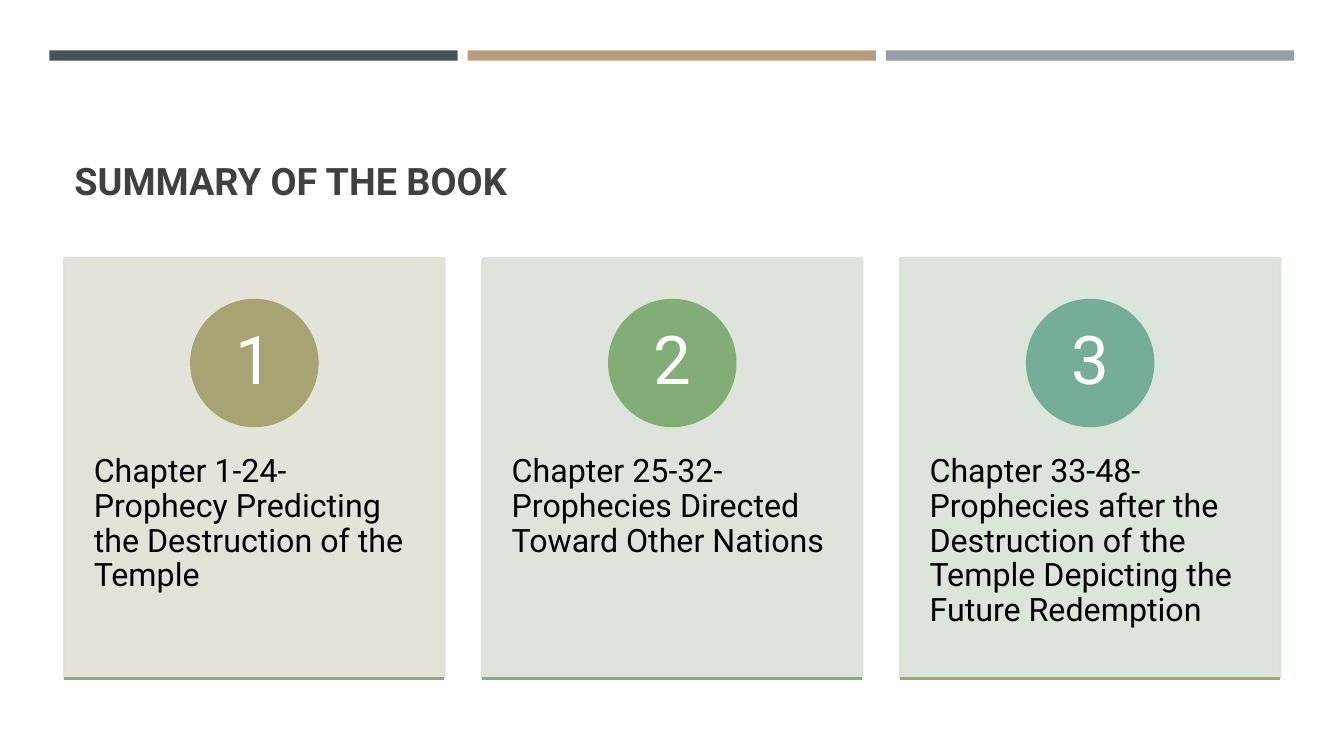
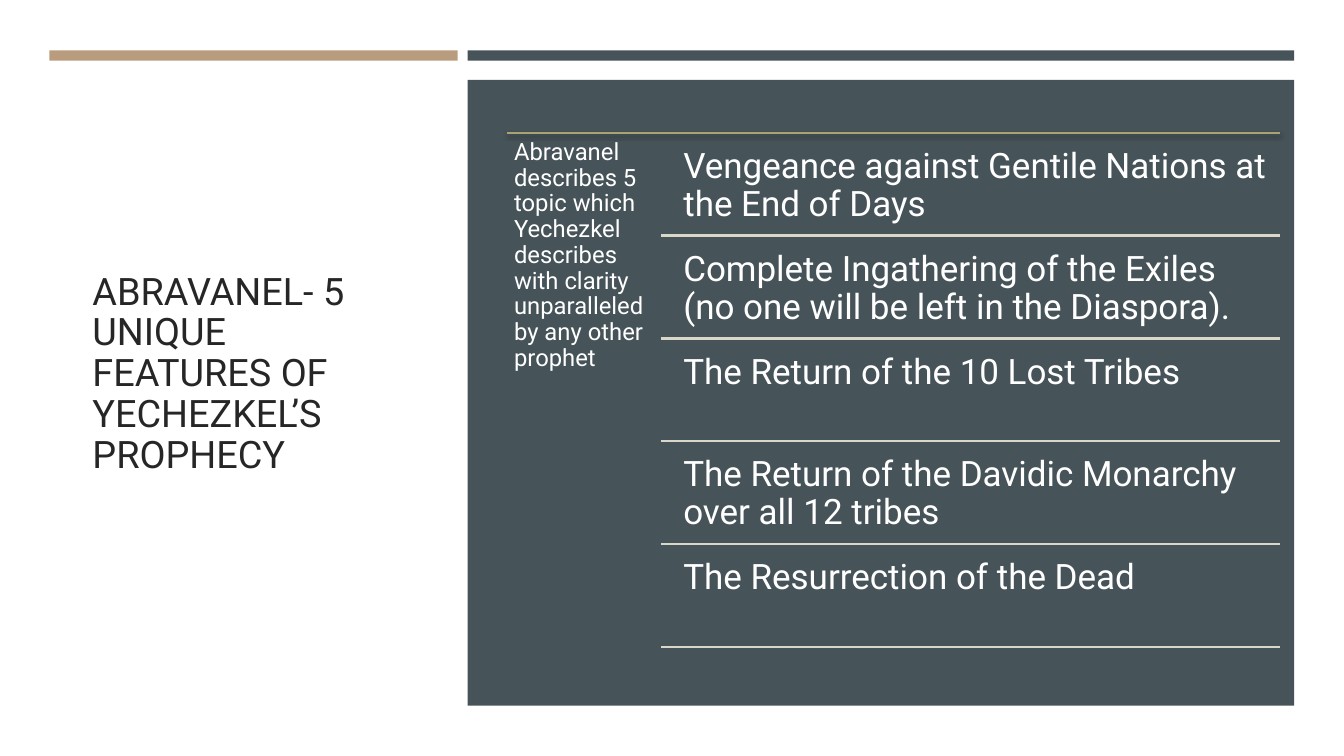
import pptx
import pptx.util
import pptx.dml.color
import pptx.enum.shapes
import pptx.enum.text
import pptx.oxml
import pptx.oxml.ns
import pptx.oxml.xmlchemy

Pt = pptx.util.Pt
RGBColor = pptx.dml.color.RGBColor
MSO_SHAPE = pptx.enum.shapes.MSO_SHAPE
ANCHOR = pptx.enum.text.MSO_ANCHOR
ALIGN = pptx.enum.text.PP_ALIGN
OxmlElement = pptx.oxml.xmlchemy.OxmlElement
qn = pptx.oxml.ns.qn

FONT = "Roboto"
SLATE = RGBColor(0x46, 0x53, 0x59)
TAN = RGBColor(0xB9, 0x9C, 0x7E)
GREY = RGBColor(0x96, 0x9F, 0xA7)
OLIVE = RGBColor(0xA7, 0xA3, 0x72)
GREEN = RGBColor(0x83, 0xAD, 0x76)
TEAL = RGBColor(0x76, 0xAD, 0x97)
SAGE = RGBColor(0x98, 0xA6, 0x7E)
MINT = RGBColor(0x82, 0xAB, 0x89)
PALE_OLIVE = RGBColor(0xE1, 0xE0, 0xD5)
PALE_GREEN = RGBColor(0xDD, 0xE1, 0xD8)
PALE_TEAL = RGBColor(0xD9, 0xE3, 0xD6)
PALE_RULE = RGBColor(0xD9, 0xD7, 0xC9)
TITLE_GREY = RGBColor(0x40, 0x40, 0x40)
TITLE_DARK = RGBColor(0x26, 0x26, 0x26)
BLACK = RGBColor(0, 0, 0)
WHITE = RGBColor(0xFF, 0xFF, 0xFF)

BAND_LEFT, BAND_TOP, BAND_HEIGHT = 35.3, 36, 7.4
BAND_WIDTH, BAND_PITCH = 291.6, 298.8
WIDE_BAND = BAND_PITCH + BAND_WIDTH
TITLE_SIZE = 27
RULE_WIDTH = 1.75
CONTENT_RIGHT = 914.4


def add_block(slide, kind, box, color, outline=False, opacity=100):
    shape = slide.shapes.add_shape(kind, *[Pt(length) for length in box])
    shape.shadow.inherit = False
    shape.fill.solid()
    shape.fill.fore_color.rgb = color
    if outline:
        shape.line.color.rgb = color
        shape.line.width = Pt(RULE_WIDTH)
    else:
        shape.line.fill.background()
    if opacity < 100:
        for color_element in shape.element.spPr.iter(qn("a:srgbClr")):
            alpha = OxmlElement("a:alpha")
            alpha.set("val", str(opacity * 1000))
            color_element.append(alpha)


def add_text(slide, text, box, size, color, insets=(7.2, 3.6),
             anchor=ANCHOR.TOP, align=ALIGN.LEFT, bold=False):
    frame = slide.shapes.add_textbox(*[Pt(length) for length in box]).text_frame
    frame.word_wrap = True
    frame.vertical_anchor = anchor
    frame.margin_left = frame.margin_right = Pt(insets[0])
    frame.margin_top = frame.margin_bottom = Pt(insets[1])
    paragraph = frame.paragraphs[0]
    paragraph.alignment = align
    paragraph.line_spacing = 0.9
    run = paragraph.add_run()
    run.text = text
    run.font.name = FONT
    run.font.size = Pt(size)
    run.font.bold = bold
    run.font.color.rgb = color


presentation = pptx.Presentation()
presentation.slide_width = Pt(960)
presentation.slide_height = Pt(540)
blank_layout = presentation.slide_layouts[6]
summary = presentation.slides.add_slide(blank_layout)
features = presentation.slides.add_slide(blank_layout)

bands = [
    (summary, 0, BAND_WIDTH, SLATE),
    (summary, 1, BAND_WIDTH, TAN),
    (summary, 2, BAND_WIDTH, GREY),
    (features, 0, BAND_WIDTH, TAN),
    (features, 1, WIDE_BAND, SLATE),
]
for slide, column, width, color in bands:
    left = BAND_LEFT + column * BAND_PITCH
    add_block(slide, MSO_SHAPE.RECTANGLE, (left, BAND_TOP, width, BAND_HEIGHT), color)

rules = []

add_text(summary, "SUMMARY OF THE BOOK", (46.1, 55.4, 868.3, 93.6), TITLE_SIZE,
         TITLE_GREY, anchor=ANCHOR.BOTTOM, bold=True)

CARD_LEFT, CARD_TOP, CARD_WIDTH, CARD_HEIGHT = 46, 184.3, 271.4, 300.3
CARD_PITCH = 298.5
CIRCLE = 90
NUMBER_INSET = 13.2
cards = [
    ("Chapter 1-24- Prophecy Predicting the Destruction of the Temple",
     PALE_OLIVE, OLIVE, SAGE),
    ("Chapter 25-32- Prophecies Directed Toward Other Nations",
     PALE_GREEN, GREEN, MINT),
    ("Chapter 33-48- Prophecies after the Destruction of the Temple "
     "Depicting the Future Redemption",
     PALE_TEAL, TEAL, OLIVE),
]
for index, (text, card_color, circle_color, rule_color) in enumerate(cards):
    left = CARD_LEFT + index * CARD_PITCH
    circle_left = left + (CARD_WIDTH - CIRCLE) / 2
    circle_top = CARD_TOP + 30
    number_size = CIRCLE - 2 * NUMBER_INSET
    bottom = CARD_TOP + CARD_HEIGHT
    add_block(summary, MSO_SHAPE.RECTANGLE, (left, CARD_TOP, CARD_WIDTH, CARD_HEIGHT),
              card_color, outline=True, opacity=90)
    add_text(summary, text, (left, 298.8, CARD_WIDTH, 180), 23, BLACK, (21, 26))
    add_block(summary, MSO_SHAPE.OVAL, (circle_left, circle_top, CIRCLE, CIRCLE),
              circle_color, outline=True)
    add_text(summary, str(index + 1),
             (circle_left + NUMBER_INSET, circle_top + NUMBER_INSET, number_size, number_size),
             48, WHITE, (7.2, 0.7), ANCHOR.MIDDLE, ALIGN.CENTER)
    rules.append((summary, left, left + CARD_WIDTH, bottom, rule_color, RULE_WIDTH, False))

add_text(features, "ABRAVANEL- 5 UNIQUE FEATURES OF YECHEZKEL’S PROPHECY",
         (59, 82.1, 240.5, 370.8), TITLE_SIZE, TITLE_DARK, anchor=ANCHOR.MIDDLE)
add_block(features, MSO_SHAPE.RECTANGLE,
          (BAND_LEFT + BAND_PITCH, 57, WIDE_BAND, 447), SLATE)

LIST_LEFT, LIST_TOP = 362.2, 95
TOPIC_LEFT, TOPIC_PITCH, TOPIC_GAP = 481, 73.4, 3.7
rules.append((features, LIST_LEFT, CONTENT_RIGHT, LIST_TOP, OLIVE, 1, True))
add_text(features,
         "Abravanel describes 5 topic which Yechezkel describes with clarity "
         "unparalleled by any other prophet",
         (LIST_LEFT, LIST_TOP, 110.2, 370.8), 17, WHITE, (5, 5))
topics = [
    "Vengeance against Gentile Nations at the End of Days",
    "Complete Ingathering of the Exiles (no one will be left in the Diaspora).",
    "The Return of the 10 Lost Tribes",
    "The Return of the Davidic Monarchy over all 12 tribes",
    "The Resurrection of the Dead",
]
for index, topic in enumerate(topics):
    top = LIST_TOP + TOPIC_GAP + index * TOPIC_PITCH
    height = TOPIC_PITCH - TOPIC_GAP
    add_text(features, topic, (TOPIC_LEFT, top, CONTENT_RIGHT - TOPIC_LEFT, height),
             25, WHITE, (7.2, 7.2))
    rules.append((features, 472.3, CONTENT_RIGHT, top + height, PALE_RULE, RULE_WIDTH, False))

for slide, left, right, y, color, width, shadowed in rules:
    rule = slide.shapes.add_connector(
        pptx.enum.shapes.MSO_CONNECTOR.STRAIGHT, Pt(left), Pt(y), Pt(right), Pt(y))
    rule.line.color.rgb = color
    rule.line.width = Pt(width)
    effects = OxmlElement("a:effectLst")
    rule._element.spPr.append(effects)
    if shadowed:
        effects.append(pptx.oxml.parse_xml(
            '<a:outerShdw xmlns:a="http://schemas.openxmlformats.org/drawingml/2006/main" '
            'blurRad="38100" dist="25400" dir="5400000" rotWithShape="0">'
            '<a:srgbClr val="000000"><a:alpha val="55000"/></a:srgbClr></a:outerShdw>'))

presentation.save("out.pptx")
